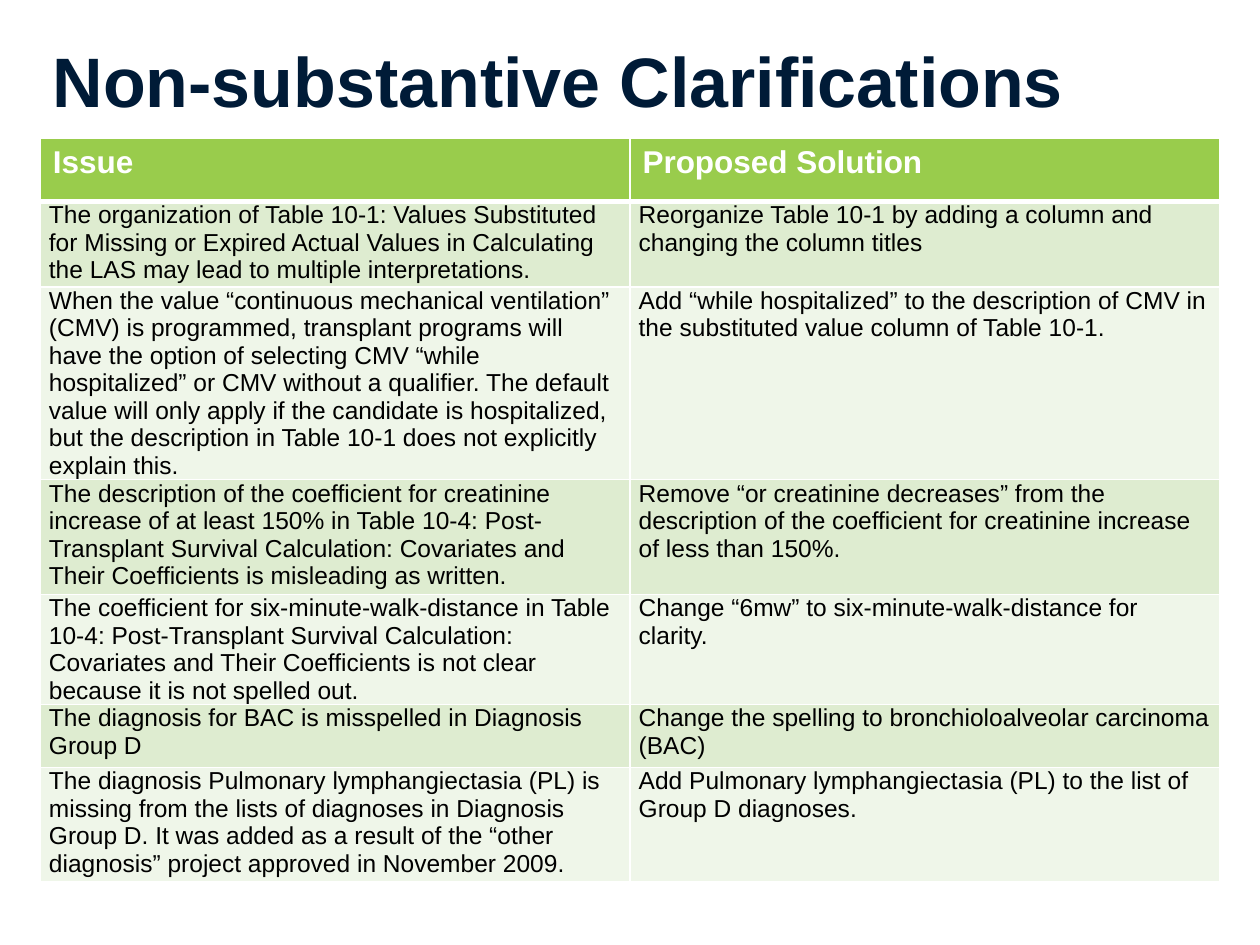
from lxml.etree import SubElement
from pptx import Presentation
from pptx.dml.color import RGBColor
from pptx.enum.text import MSO_ANCHOR as Anchor, PP_ALIGN as Align
from pptx.oxml.ns import qn
from pptx.util import Pt

FONT = "Arial"
LEFT, COLUMN_WIDTH = 23, 337
HEADINGS = ("Issue", "Proposed Solution")
ISSUES = [
    (49, "The organization of Table 10-1: Values Substituted for Missing or Expired Actual Values "
         "in Calculating the LAS may lead to multiple interpretations.",
     "Reorganize Table 10-1 by adding a column and changing the column titles"),
    (98, "When the value “continuous mechanical ventilation” (CMV) is programmed, transplant programs "
         "will have the option of selecting CMV “while hospitalized” or CMV without a qualifier. "
         "The default value will only apply if the candidate is hospitalized, but the description "
         "in Table 10-1 does not explicitly explain this.",
     "Add “while hospitalized” to the description of CMV in the substituted value column of Table 10-1."),
    (65.5, "The description of the coefficient for creatinine increase of at least 150% in Table 10-4: "
           "Post-Transplant Survival Calculation: Covariates and Their Coefficients is misleading as written.",
     "Remove “or creatinine decreases” from the description of the coefficient for creatinine "
     "increase of less than 150%."),
    (49, "The coefficient for six-minute-walk-distance in Table 10-4: Post-Transplant Survival "
         "Calculation: Covariates and Their Coefficients is not clear because it is not spelled out.",
     "Change “6mw” to six-minute-walk-distance for clarity."),
    (36, "The diagnosis for BAC is misspelled in Diagnosis Group D",
     "Change the spelling to bronchioloalveolar carcinoma (BAC)"),
    (65.5, "The diagnosis Pulmonary lymphangiectasia (PL) is missing from the lists of diagnoses in "
           "Diagnosis Group D. It was added as a result of the “other diagnosis” project approved "
           "in November 2009.",
     "Add Pulmonary lymphangiectasia (PL) to the list of Group D diagnoses."),
]


def color(value):
    return RGBColor.from_string(value)


def write(frame, text, size, shade, bold):
    frame.text = text
    para = frame.paragraphs[0]
    para.alignment = Align.LEFT
    for span in para.runs:
        span.font.name = FONT
        span.font.size = Pt(size)
        span.font.bold = bold
        span.font.color.rgb = color(shade)


def add_title(page, text):
    title = page.shapes.title
    title.left, title.top, title.width, title.height = Pt(LEFT), Pt(12), Pt(688), Pt(67)
    title.text_frame.vertical_anchor = Anchor.MIDDLE
    write(title.text_frame, text, 40, "001B37", True)


def set_borders(cell, top, bottom):
    properties = cell._tc.get_or_add_tcPr()
    for side, width in (("L", 1), ("R", 1), ("T", top), ("B", bottom)):
        line = SubElement(properties, qn(f"a:ln{side}"), w=str(Pt(width)))
        fill = SubElement(line, qn("a:solidFill"))
        SubElement(fill, qn("a:srgbClr"), val="FFFFFF")


def fill_cell(cell, shade, top=1, bottom=1):
    set_borders(cell, top, bottom)
    cell.fill.solid()
    cell.fill.fore_color.rgb = color(shade)


def add_issue_table(page):
    heights = [36] + [height for height, *_ in ISSUES]
    table = page.shapes.add_table(
        len(heights), len(HEADINGS), Pt(LEFT), Pt(79),
        Pt(COLUMN_WIDTH * len(HEADINGS)), Pt(sum(heights))).table
    for column in table.columns:
        column.width = Pt(COLUMN_WIDTH)
    for row, height in zip(table.rows, heights):
        row.height = Pt(height)
    for cell, heading in zip(table.rows[0].cells, HEADINGS):
        write(cell.text_frame, heading, 18, "FFFFFF", True)
        fill_cell(cell, "99CC4C", bottom=3)
    for index, (_, *texts) in enumerate(ISSUES, 1):
        for cell, text in zip(table.rows[index].cells, texts):
            cell.margin_left = cell.margin_right = Pt(5)
            cell.margin_top = cell.margin_bottom = Pt(0)
            write(cell.text_frame, text, 14, "000000", False)
            fill_cell(cell, "DEECD0" if index % 2 else "EFF6E9", top=3 if index == 1 else 1)


def main():
    deck = Presentation()
    deck.slide_width, deck.slide_height = Pt(720), Pt(540)
    page = deck.slides.add_slide(deck.slide_layouts[5])
    add_title(page, "Non-substantive Clarifications")
    add_issue_table(page)
    deck.save("out.pptx")


if __name__ == "__main__":
    main()
